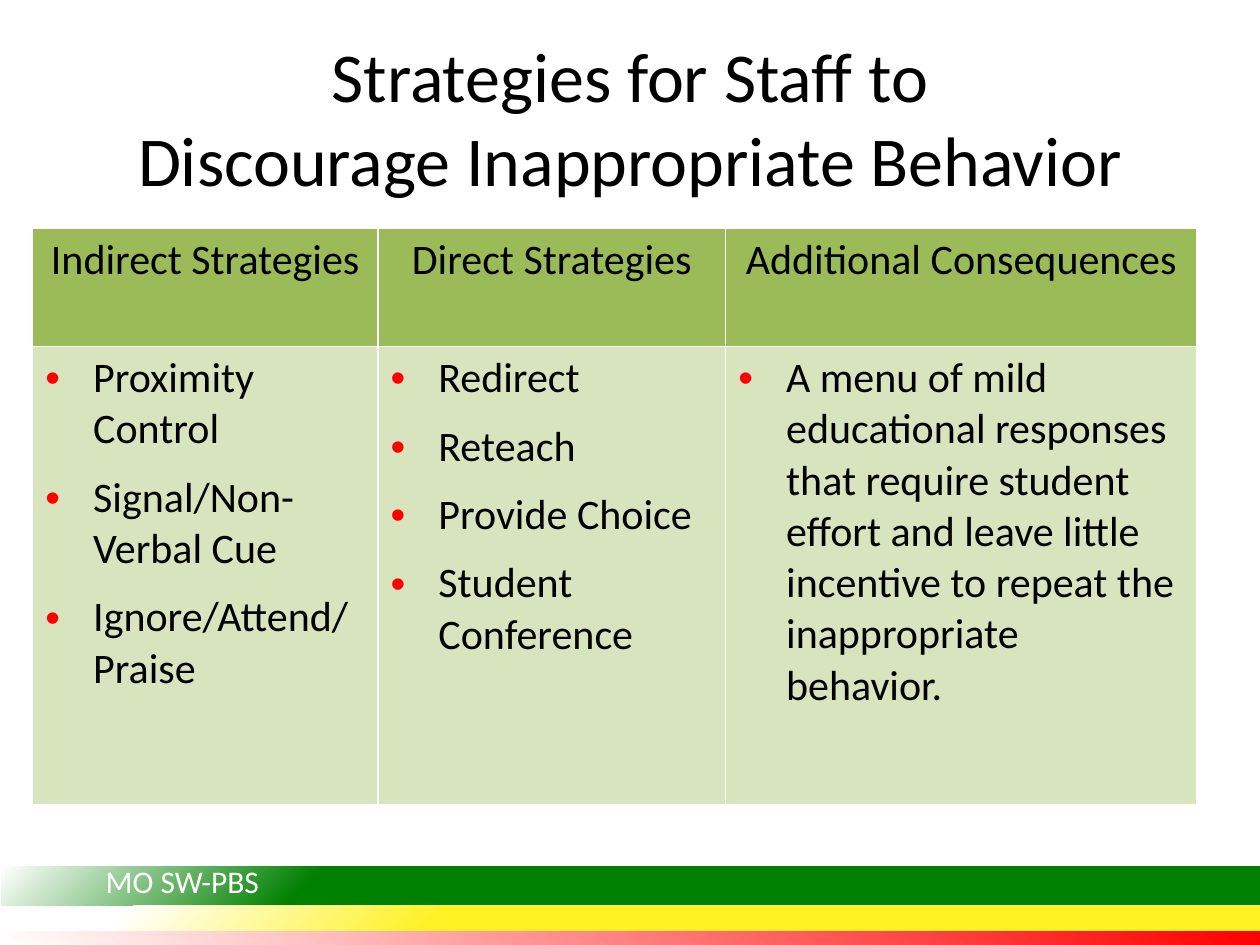
"""Builds a slide with a table of strategies for discouraging inappropriate behavior."""
from pptx import Presentation
from pptx.dml.color import RGBColor
from pptx.enum.shapes import MSO_SHAPE
from pptx.enum.text import MSO_ANCHOR, PP_ALIGN
from pptx.oxml import parse_xml
from pptx.oxml.ns import nsdecls
from pptx.util import Inches, Pt

FONT = "Calibri"
COLORS = {"text": "000000", "white": "FFFFFF", "header": "9BBB59", "body": "D7E4BD",
          "bullet": "FF0000", "red": "FF0000", "green": "008000", "yellow": "FFF123"}
TITLE = "Strategies for Staff to\vDiscourage Inappropriate Behavior"
FOOTER = "MO SW-PBS"
COLUMNS = [
    ("Indirect Strategies", 2.74,
     ["Proximity Control", "Signal/Non-Verbal Cue", "Ignore/Attend/\vPraise"]),
    ("Direct Strategies", 2.76,
     ["Redirect", "Reteach", "Provide Choice", "Student Conference"]),
    ("Additional Consequences", 3.74,
     ["A menu of mild educational responses that require student effort and leave "
      "little incentive to repeat the inappropriate behavior."]),
]
ROWS = [0.94, 3.64]
TABLE_LEFT, TABLE_TOP = 0.26, 1.81
BANDS_TOP = 6.88
BANDS = [("green", 0.31, 75, 100, 100), ("yellow", 0.2, 65, 90, 100), ("red", 0.12, 0, 100, 0)]
INDENT = Inches(0.38)


def style(p, size, color="text"):
    for r in p.runs:
        r.font.name, r.font.size = FONT, Pt(size)
        r.font.color.rgb = RGBColor.from_string(COLORS[color])


def add_band(slide, top, height, color, start, end, focus_top):
    sp = slide.shapes.add_shape(MSO_SHAPE.RECTANGLE, Inches(0.01), Inches(top),
                                Inches(10), Inches(height))
    sp.shadow.inherit = False
    sp.line.fill.background()
    sp.fill.gradient()
    grad = sp.fill._xPr.gradFill
    grad.getparent().replace(grad, parse_xml(
        f'<a:gradFill {nsdecls("a")} rotWithShape="1"><a:gsLst>'
        f'<a:gs pos="{start * 1000}"><a:srgbClr val="{COLORS[color]}"/></a:gs>'
        f'<a:gs pos="{end * 1000}"><a:srgbClr val="{COLORS["white"]}"/></a:gs></a:gsLst>'
        f'<a:path path="circle"><a:fillToRect l="100000" t="{focus_top * 1000}" '
        f'b="{(100 - focus_top) * 1000}"/></a:path></a:gradFill>'))


def add_footer(slide):
    tf = slide.shapes.add_textbox(Inches(0.74), Inches(6.79), Inches(1.92), Inches(0.4)).text_frame
    tf.word_wrap = True
    tf.text = FOOTER
    style(tf.paragraphs[0], 18, "white")
    fill = tf.paragraphs[0].runs[0].font._element.find(
        "{http://schemas.openxmlformats.org/drawingml/2006/main}solidFill")
    fill.addnext(parse_xml(
        f'<a:effectLst {nsdecls("a")}><a:outerShdw blurRad="38100" dist="38100" dir="2700000">'
        '<a:srgbClr val="000000"><a:alpha val="43000"/></a:srgbClr></a:outerShdw></a:effectLst>'))


def format_cell(cell, color):
    cell.fill.solid()
    cell.fill.fore_color.rgb = RGBColor.from_string(COLORS[color])
    for i, side in enumerate("LRTB"):
        cell._tc.get_or_add_tcPr().insert(i, parse_xml(
            f'<a:ln{side} {nsdecls("a")} w="12700"><a:solidFill>'
            f'<a:srgbClr val="{COLORS["white"]}"/></a:solidFill></a:ln{side}>'))


def add_bullet(p):
    pPr = p._p.get_or_add_pPr()
    pPr.set("marL", str(INDENT))
    pPr.set("indent", str(-INDENT))
    for xml in (f'<a:buClr {nsdecls("a")}><a:srgbClr val="{COLORS["bullet"]}"/></a:buClr>',
                f'<a:buFont {nsdecls("a")} typeface="Arial"/>',
                f'<a:buChar {nsdecls("a")} char="•"/>'):
        pPr.append(parse_xml(xml))


def add_strategies(slide):
    width = sum(w for _, w, _ in COLUMNS)
    table = slide.shapes.add_table(len(ROWS), len(COLUMNS), Inches(TABLE_LEFT), Inches(TABLE_TOP),
                                   Inches(width), Inches(sum(ROWS))).table
    for row, height in zip(table.rows, ROWS):
        row.height = Inches(height)
    for c, (heading, w, items) in enumerate(COLUMNS):
        table.columns[c].width = Inches(w)
        head, body = table.cell(0, c), table.cell(1, c)
        format_cell(head, "header")
        format_cell(body, "body")
        head.text = heading
        p = head.text_frame.paragraphs[0]
        p.alignment = PP_ALIGN.CENTER
        style(p, 24)
        p.runs[0].font.bold = False
        for i, item in enumerate(items):
            tf = body.text_frame
            p = tf.add_paragraph() if i else tf.paragraphs[0]
            p.text = item
            p.space_before = Pt(9.8 if i else 0)
            add_bullet(p)
            style(p, 24)


def main():
    prs = Presentation()
    prs.slide_width, prs.slide_height = Inches(10), Inches(7.5)
    slide = prs.slides.add_slide(prs.slide_layouts[5])
    title = slide.shapes.title
    title.left, title.top, title.width, title.height = map(Inches, (0.5, 0.3, 9, 1.25))
    tf = title.text_frame
    tf.text = TITLE
    tf.vertical_anchor = MSO_ANCHOR.MIDDLE
    tf.paragraphs[0].alignment = PP_ALIGN.CENTER
    style(tf.paragraphs[0], 40)
    top = BANDS_TOP
    for color, height, start, end, focus_top in BANDS:
        add_band(slide, top, height, color, start, end, focus_top)
        top += height
    add_footer(slide)
    add_strategies(slide)
    prs.save("out.pptx")


if __name__ == "__main__":
    main()
